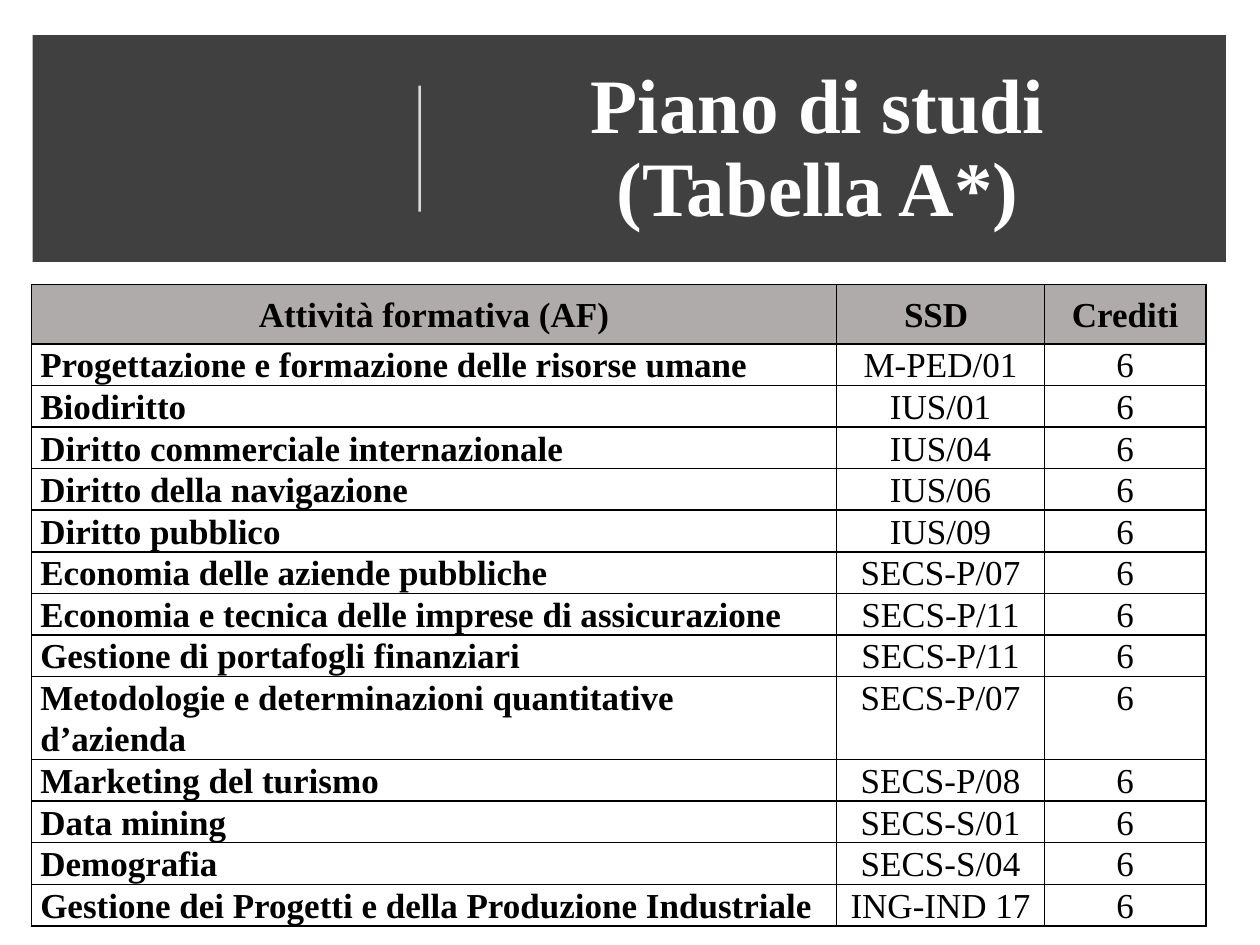
from dataclasses import dataclass

from lxml.etree import SubElement
from pptx import Presentation
from pptx.dml.color import RGBColor
from pptx.enum.shapes import MSO_CONNECTOR, MSO_SHAPE
from pptx.enum.text import MSO_ANCHOR, PP_ALIGN
from pptx.oxml.ns import qn
from pptx.util import Inches, Pt


@dataclass(frozen=True)
class Theme:
    """Colours, font and type sizes of the slide."""

    font: str = "Times New Roman"
    title_size: int = 44
    table_size: int = 20
    white: str = "FFFFFF"
    black: str = "000000"
    banner: str = "404040"
    header: str = "AFABAB"


THEME = Theme()
TITLE = "Piano di studi (Tabella A*)"
HEADINGS = ("Attività formativa (AF)", "SSD ", "Crediti")
CREDITS = "6"
COURSES = (
    ("Progettazione e formazione delle risorse umane", "M-PED/01"),
    ("Biodiritto", "IUS/01"),
    ("Diritto commerciale internazionale", "IUS/04"),
    ("Diritto della navigazione", "IUS/06"),
    ("Diritto pubblico", "IUS/09"),
    ("Economia delle aziende pubbliche", "SECS-P/07"),
    ("Economia e tecnica delle imprese di assicurazione", "SECS-P/11"),
    ("Gestione di portafogli finanziari", "SECS-P/11"),
    ("Metodologie e determinazioni quantitative d’azienda", "SECS-P/07"),
    ("Marketing del turismo", "SECS-P/08"),
    ("Data mining", "SECS-S/01"),
    ("Demografia", "SECS-S/04"),
    ("Gestione dei Progetti e della Produzione Industriale", "ING-IND 17"),
)
COLUMN_WIDTHS = (6.39, 1.65, 1.28)
HEADER_HEIGHT, FIRST_HEIGHT, ROW_HEIGHT = 0.47, 0.22, 0.18


def style_paragraph(paragraph, size, color, bold, align, spacing):
    """Set the font, alignment and line spacing of a paragraph."""
    paragraph.alignment = align
    paragraph.line_spacing = spacing
    font = paragraph.font
    font.name, font.size, font.bold = THEME.font, Pt(size), bold
    font.color.rgb = RGBColor.from_string(color)


def add_banner(slide):
    """Draw the dark band behind the title."""
    banner = slide.shapes.add_shape(
        MSO_SHAPE.RECTANGLE, Inches(0.26), Inches(0.28), Inches(9.47), Inches(1.8)
    )
    banner.shadow.inherit = False
    banner.fill.solid()
    banner.fill.fore_color.rgb = RGBColor.from_string(THEME.banner)
    banner.line.fill.background()


def place_title(slide):
    """Fill the title placeholder and bring it in front of the banner."""
    title = slide.shapes.title
    title.left, title.top = Inches(3.5), Inches(0.5)
    title.width, title.height = Inches(5.98), Inches(1.38)
    frame = title.text_frame
    frame.text = TITLE
    frame.word_wrap = True
    frame.vertical_anchor = MSO_ANCHOR.MIDDLE
    style_paragraph(
        frame.paragraphs[0], THEME.title_size, THEME.white, True, PP_ALIGN.CENTER, 0.9
    )
    title.element.getparent().append(title.element)


def add_divider(slide):
    """Draw the translucent vertical line beside the title."""
    divider = slide.shapes.add_connector(
        MSO_CONNECTOR.STRAIGHT, Inches(3.33), Inches(1.68), Inches(3.33), Inches(0.68)
    )
    divider.line.width = Pt(1.5)
    divider.line.color.rgb = RGBColor.from_string(THEME.white)
    properties = divider.element.spPr
    color = properties.find(".//" + qn("a:srgbClr"))
    SubElement(color, qn("a:alpha"), val="80000")
    SubElement(properties, qn("a:effectLst"))


def set_borders(cell):
    """Give a cell a thin black line on every side."""
    properties = cell._tc.get_or_add_tcPr()
    for position, side in enumerate(("lnL", "lnR", "lnT", "lnB")):
        border = SubElement(properties, qn(f"a:{side}"), w=str(Pt(1)))
        fill = SubElement(border, qn("a:solidFill"))
        SubElement(fill, qn("a:srgbClr"), val=THEME.black)
        properties.insert(position, border)


def fill_cell(cell, text, bold, align, header):
    """Write and format one table cell."""
    cell.text = text
    cell.margin_left = cell.margin_right = Inches(0.07)
    cell.margin_top = cell.margin_bottom = 0
    cell.vertical_anchor = MSO_ANCHOR.MIDDLE if header else MSO_ANCHOR.TOP
    paragraph = cell.text_frame.paragraphs[0]
    style_paragraph(paragraph, THEME.table_size, THEME.black, bold, align, 1.07)
    paragraph.space_after = Pt(8)
    if header:
        cell.fill.solid()
        cell.fill.fore_color.rgb = RGBColor.from_string(THEME.header)
    else:
        cell.fill.background()
    set_borders(cell)


def add_course_table(slide):
    """Build the table of courses, sectors and credits."""
    rows = [HEADINGS] + [(course, sector, CREDITS) for course, sector in COURSES]
    heights = [HEADER_HEIGHT, FIRST_HEIGHT] + [ROW_HEIGHT] * (len(rows) - 2)
    table = slide.shapes.add_table(
        len(rows), len(HEADINGS), Inches(0.25), Inches(2.26),
        Inches(sum(COLUMN_WIDTHS)), Inches(sum(heights)),
    ).table
    table.first_row = table.horz_banding = False
    for column, width in zip(table.columns, COLUMN_WIDTHS):
        column.width = Inches(width)
    for row_index, (values, height) in enumerate(zip(rows, heights)):
        table.rows[row_index].height = Inches(height)
        header = row_index == 0
        for column_index, text in enumerate(values):
            course_name = column_index == 0 and not header
            align = PP_ALIGN.LEFT if course_name else PP_ALIGN.CENTER
            cell = table.cell(row_index, column_index)
            fill_cell(cell, text, header or course_name, align, header)


def main():
    """Build and save the study plan slide."""
    presentation = Presentation()
    presentation.slide_width, presentation.slide_height = Inches(10), Inches(7.5)
    slide = presentation.slides.add_slide(presentation.slide_layouts[5])
    add_banner(slide)
    place_title(slide)
    add_divider(slide)
    add_course_table(slide)
    presentation.save("out.pptx")


if __name__ == "__main__":
    main()
